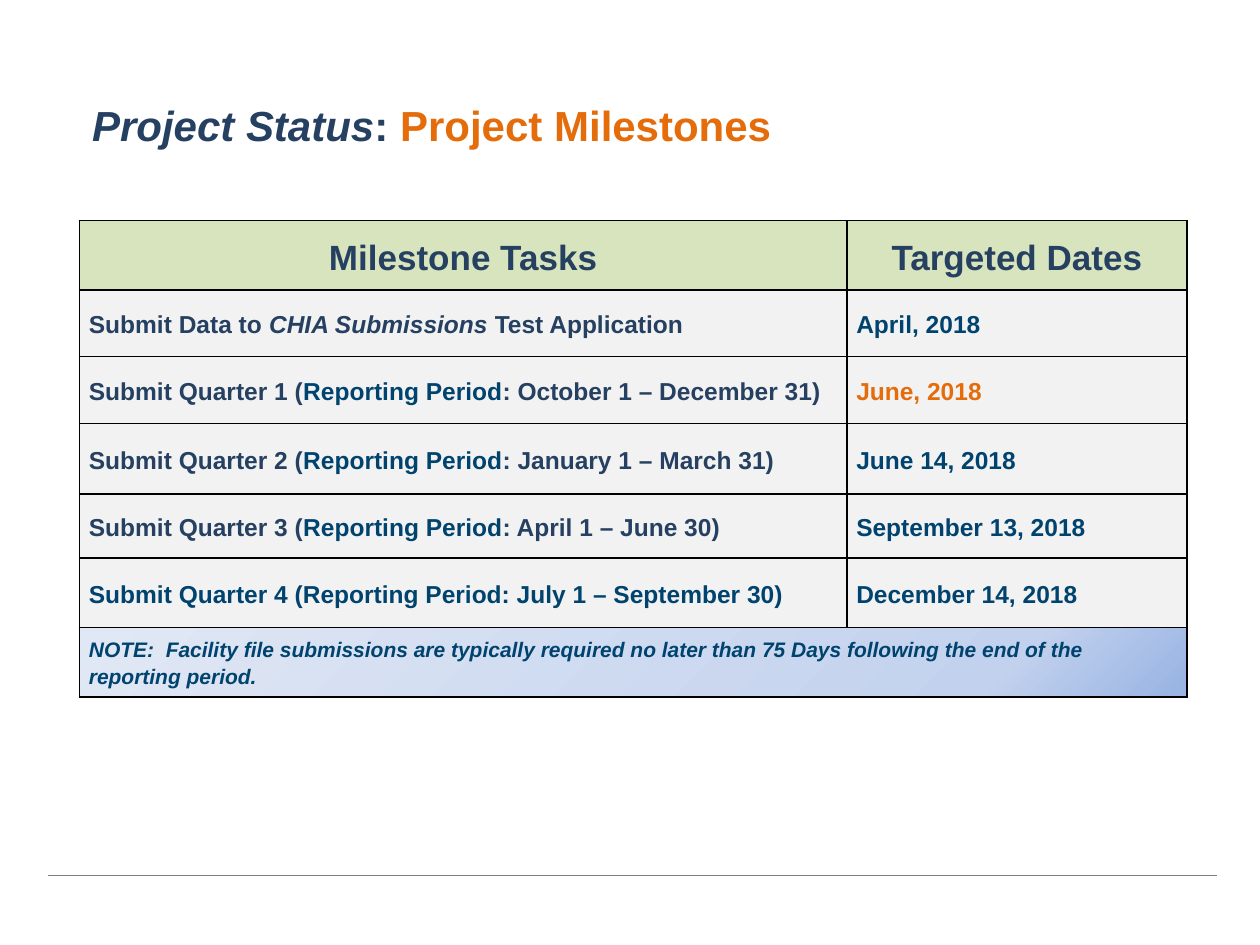
from lxml import etree
from pptx import Presentation
from pptx.dml.color import RGBColor
from pptx.enum.shapes import MSO_CONNECTOR
from pptx.enum.text import MSO_ANCHOR, PP_ALIGN
from pptx.oxml.ns import qn
from pptx.util import Pt

LEFT, CENTER = PP_ALIGN.LEFT, PP_ALIGN.CENTER
MIDDLE = MSO_ANCHOR.MIDDLE
STRAIGHT = MSO_CONNECTOR.STRAIGHT

FONT = "Arial"
COLORS = {
    "navy": "254061", "blue": "00436E", "orange": "E46C0A", "black": "000000",
    "rule": "808080", "header": "D7E4BD", "row": "F2F2F2",
}
NOTE_STOPS = [(1, "9AB5E4"), (18, "C2D1ED"), (100, "E1E8F5")]
NOTE_ANGLE = 225

COL_WIDTHS = [438.5, 194.4]
ROW_HEIGHTS = [39.6, 38.2, 38.2, 40.3, 36.7, 39.6]
NOTE_HEIGHT = 39.6
LEFT_EDGE, TABLE_TOP = 45.4, 126


def quarter(number, months):
    return [(f"Submit Quarter {number} (", "navy"), ("Reporting Period", "blue"),
            (f": {months})", "navy")]


HEADINGS = ["Milestone Tasks", "Targeted Dates"]
# Each milestone: runs of (text, colour[, italic]), then date and its colour
MILESTONES = [
    ([("Submit Data to ", "navy"), ("CHIA Submissions ", "navy", True),
      ("Test Application", "navy")], "April, 2018", "blue"),
    (quarter(1, "October 1 – December 31"), "June, 2018", "orange"),
    (quarter(2, "January 1 – March 31"), "June 14, 2018", "blue"),
    (quarter(3, "April 1 – June 30"), "September 13, 2018", "blue"),
    ([("Submit Quarter 4 (Reporting Period: July 1 – September 30)", "blue")],
     "December 14, 2018", "blue"),
]
NOTE = ("NOTE:  Facility file submissions are typically required no later than "
        "75 Days following the end of the reporting period.")


def rgb(name):
    return RGBColor.from_string(COLORS[name])


def add_runs(p, runs, size):
    for text, color, *italic in runs:
        r = p.add_run()
        r.text = text
        r.font.name, r.font.size, r.font.bold = FONT, Pt(size), True
        r.font.italic = bool(italic and italic[0])
        r.font.color.rgb = rgb(color)


def add_borders(cell):
    tc_pr = cell._tc.get_or_add_tcPr()
    for side in ("a:lnL", "a:lnR", "a:lnT", "a:lnB"):
        ln = etree.SubElement(tc_pr, qn(side), w=str(Pt(1)))
        fill = etree.SubElement(ln, qn("a:solidFill"))
        etree.SubElement(fill, qn("a:srgbClr"), val=COLORS["black"])


def fill_gradient(cell, stops, angle):
    grad = etree.SubElement(cell._tc.get_or_add_tcPr(), qn("a:gradFill"))
    stop_list = etree.SubElement(grad, qn("a:gsLst"))
    for percent, color in stops:
        gs = etree.SubElement(stop_list, qn("a:gs"), pos=str(percent * 1000))
        etree.SubElement(gs, qn("a:srgbClr"), val=color)
    etree.SubElement(grad, qn("a:lin"), ang=str(angle * 60000), scaled="0")


def write_cell(cell, runs, size, fill=None, align=LEFT):
    cell.margin_left = cell.margin_right = Pt(5.4)
    cell.margin_top = cell.margin_bottom = 0
    cell.vertical_anchor = MIDDLE
    p = cell.text_frame.paragraphs[0]
    p.alignment, p.line_spacing = align, 1.15
    add_runs(p, runs, size)
    add_borders(cell)
    if fill:
        cell.fill.solid()
        cell.fill.fore_color.rgb = rgb(fill)


def add_grid(slide, x, y, widths, heights):
    """Add an empty table with the given column widths and row heights."""
    table = slide.shapes.add_table(len(heights), len(widths), Pt(x), Pt(y),
                                   Pt(sum(widths)), Pt(sum(heights))).table
    table.first_row = table.horz_banding = False
    for column, width in zip(table.columns, widths):
        column.width = Pt(width)
    for row, height in zip(table.rows, heights):
        row.height = Pt(height)
    return table


def add_title(slide, x, y, w, h):
    title = slide.shapes.title
    title.left, title.top, title.width, title.height = Pt(x), Pt(y), Pt(w), Pt(h)
    tf = title.text_frame
    tf.vertical_anchor = MIDDLE
    p = tf.paragraphs[0]
    p.alignment = LEFT
    add_runs(p, [("Project Status", "navy", True), (": ", "navy"),
                 ("Project Milestones", "orange")], 24)


def add_milestones(slide, x, y):
    table = add_grid(slide, x, y, COL_WIDTHS, ROW_HEIGHTS)
    for col, heading in enumerate(HEADINGS):
        write_cell(table.cell(0, col), [(heading, "navy")], 20, "header", CENTER)
    for row, (task, date, color) in enumerate(MILESTONES, 1):
        write_cell(table.cell(row, 0), task, 14, "row")
        write_cell(table.cell(row, 1), [(date, color)], 14, "row")


def add_note(slide, x, y, w, h):
    cell = add_grid(slide, x, y, [w], [h]).cell(0, 0)
    write_cell(cell, [(NOTE, "blue", True)], 12)
    fill_gradient(cell, NOTE_STOPS, NOTE_ANGLE)


def add_footer_rule(slide, x, y, w):
    line = slide.shapes.add_connector(STRAIGHT, Pt(x), Pt(y), Pt(x + w), Pt(y))
    line.line.color.rgb = rgb("rule")
    line.line.width = Pt(0.5)
    etree.SubElement(line._element.spPr, qn("a:effectLst"))


def main():
    prs = Presentation()
    prs.slide_width, prs.slide_height = Pt(720), Pt(540)
    slide = prs.slides.add_slide(prs.slide_layouts[5])
    width = sum(COL_WIDTHS)
    add_footer_rule(slide, 27.4, 500.4, 668.2)
    add_title(slide, LEFT_EDGE, 46, width, 50.4)
    add_milestones(slide, LEFT_EDGE, TABLE_TOP)
    add_note(slide, LEFT_EDGE, TABLE_TOP + sum(ROW_HEIGHTS), width, NOTE_HEIGHT)
    prs.save("out.pptx")


if __name__ == "__main__":
    main()
